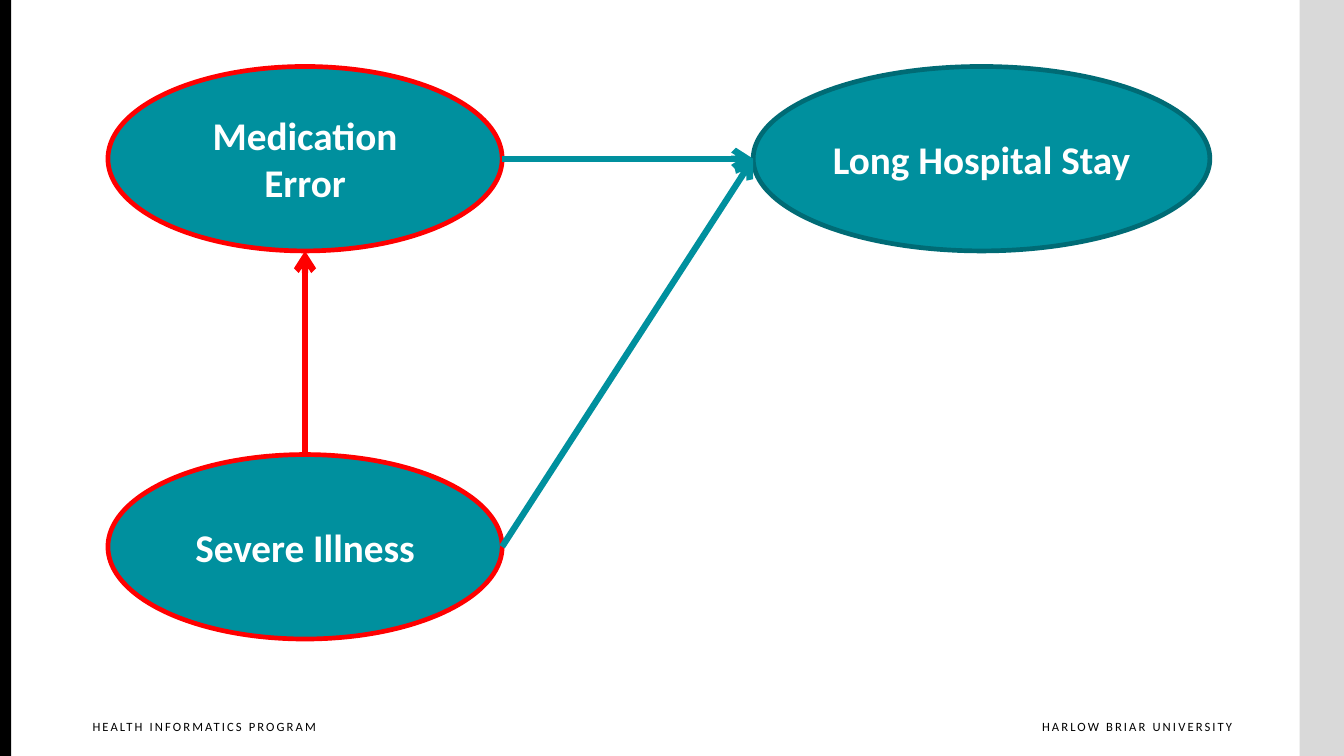
from dataclasses import dataclass

from lxml.etree import SubElement
from pptx import Presentation
from pptx.dml.color import RGBColor
from pptx.enum.shapes import MSO_CONNECTOR, MSO_SHAPE
from pptx.enum.text import MSO_ANCHOR, PP_ALIGN
from pptx.oxml.ns import qn
from pptx.slide import Slide
from pptx.util import Emu, Inches, Pt

SLIDE_WIDTH, SLIDE_HEIGHT = Inches(13.33), Inches(7.5)


@dataclass(frozen=True)
class Theme:
    font: str = "Calibri"
    teal: str = "00909E"
    dark_teal: str = "006B75"
    red: str = "FF0000"
    white: str = "FFFFFF"
    black: str = "000000"
    grey: str = "D9D9D9"
    node_size: float = 28
    footer_size: float = 9
    footer_spacing: float = 1.5
    outline_width: float = 3.35
    arrow_width: float = 4.5


THEME = Theme()


# Lengths are percentages of the slide's width and height
@dataclass(frozen=True)
class Area:
    left: float
    top: float
    width: float
    height: float

    def point(self, across: float, down: float) -> tuple[Emu, Emu]:
        return (across_slide(self.left + across * self.width),
                down_slide(self.top + down * self.height))

    def placement(self) -> tuple[Emu, Emu, Emu, Emu]:
        return (across_slide(self.left), down_slide(self.top),
                across_slide(self.width), down_slide(self.height))


@dataclass(frozen=True)
class Band:
    area: Area
    color: str


@dataclass(frozen=True)
class Footer:
    area: Area
    text: str
    alignment: PP_ALIGN


@dataclass(frozen=True)
class Node:
    area: Area
    text: str
    outline: str


@dataclass(frozen=True)
class Arrow:
    source: Node
    start: tuple[float, float]
    target: Node
    end: tuple[float, float]
    color: str


# Places on the edge of a node
TOP, LEFT, BOTTOM, RIGHT = (0.5, 0), (0, 0.5), (0.5, 1), (1, 0.5)

# Grid of the diagram
CAUSE_LEFT, CAUSE_WIDTH = 8.03, 29.33
EFFECT_LEFT, EFFECT_WIDTH = 56.04, 33.98
UPPER_ROW, LOWER_ROW, NODE_HEIGHT = 8.8, 60.13, 24.4
FOOTER_TOP, FOOTER_HEIGHT = 94.4, 4.4

BANDS = [
    Band(Area(96.7, 0, 3.3, 100), THEME.grey),
    Band(Area(0, 0, 0.83, 100), THEME.black),
]
FOOTERS = [
    Footer(Area(74.04, FOOTER_TOP, 17.63, FOOTER_HEIGHT), "HARLOW BRIAR UNIVERSITY", PP_ALIGN.RIGHT),
    Footer(Area(6.15, FOOTER_TOP, 19.05, FOOTER_HEIGHT), "HEALTH INFORMATICS PROGRAM", PP_ALIGN.LEFT),
]
ERROR = Node(Area(CAUSE_LEFT, UPPER_ROW, CAUSE_WIDTH, NODE_HEIGHT), "Medication Error", THEME.red)
STAY = Node(Area(EFFECT_LEFT, UPPER_ROW, EFFECT_WIDTH, NODE_HEIGHT), "Long Hospital Stay", THEME.dark_teal)
ILLNESS = Node(Area(CAUSE_LEFT, LOWER_ROW, CAUSE_WIDTH, NODE_HEIGHT), "Severe Illness", THEME.red)
ARROWS = [
    Arrow(ERROR, RIGHT, STAY, LEFT, THEME.teal),
    Arrow(ILLNESS, RIGHT, STAY, LEFT, THEME.teal),
    Arrow(ILLNESS, TOP, ERROR, BOTTOM, THEME.red),
]


def across_slide(percent: float) -> Emu:
    return Emu(round(SLIDE_WIDTH * percent / 100))


def down_slide(percent: float) -> Emu:
    return Emu(round(SLIDE_HEIGHT * percent / 100))


def apply_format(target: object, values: dict[str, object]) -> None:
    for name, value in values.items():
        setattr(target, name, value)


def write_text(box, text: str, alignment: PP_ALIGN, color: str, frame_format: dict, font_format: dict):
    frame = box.text_frame
    apply_format(frame, {"word_wrap": True} | frame_format)
    para = frame.paragraphs[0]
    para.alignment = alignment
    span = para.add_run()
    span.text = text
    apply_format(span.font, {"name": THEME.font} | font_format)
    span.font.color.rgb = RGBColor.from_string(color)
    return span


def add_filled_shape(page: Slide, kind: MSO_SHAPE, area: Area, color: str):
    shape = page.shapes.add_shape(kind, *area.placement())
    shape.shadow.inherit = False
    shape.fill.solid()
    shape.fill.fore_color.rgb = RGBColor.from_string(color)
    return shape


def draw_band(page: Slide, band: Band) -> None:
    add_filled_shape(page, MSO_SHAPE.RECTANGLE, band.area, band.color).line.fill.background()


def draw_footer(page: Slide, footer: Footer) -> None:
    box = page.shapes.add_textbox(*footer.area.placement())
    span = write_text(box, footer.text, footer.alignment, THEME.black,
                      {"margin_right": 0}, {"size": Pt(THEME.footer_size)})
    span.font._element.set("spc", str(round(THEME.footer_spacing * 100)))


def draw_node(page: Slide, node: Node) -> None:
    ellipse = add_filled_shape(page, MSO_SHAPE.OVAL, node.area, THEME.teal)
    ellipse.line.color.rgb = RGBColor.from_string(node.outline)
    ellipse.line.width = Pt(THEME.outline_width)
    write_text(ellipse, node.text, PP_ALIGN.CENTER, THEME.white,
               {"vertical_anchor": MSO_ANCHOR.MIDDLE},
               {"size": Pt(THEME.node_size), "bold": True})


def draw_arrow(page: Slide, arrow: Arrow) -> None:
    connector = page.shapes.add_connector(
        MSO_CONNECTOR.STRAIGHT,
        *arrow.source.area.point(*arrow.start),
        *arrow.target.area.point(*arrow.end))
    connector.line.color.rgb = RGBColor.from_string(arrow.color)
    connector.line.width = Pt(THEME.arrow_width)
    SubElement(connector.line._get_or_add_ln(), qn("a:tailEnd"), type="arrow")
    SubElement(connector._element.spPr, qn("a:effectLst"))


def main() -> None:
    deck = Presentation()
    apply_format(deck, {"slide_width": SLIDE_WIDTH, "slide_height": SLIDE_HEIGHT})
    page = deck.slides.add_slide(deck.slide_layouts[6])

    # Side bands and footer
    for band in BANDS:
        draw_band(page, band)
    for footer in FOOTERS:
        draw_footer(page, footer)

    # Causal diagram
    for node in (ERROR, STAY, ILLNESS):
        draw_node(page, node)
    for arrow in ARROWS:
        draw_arrow(page, arrow)

    deck.save("out.pptx")


if __name__ == "__main__":
    main()
